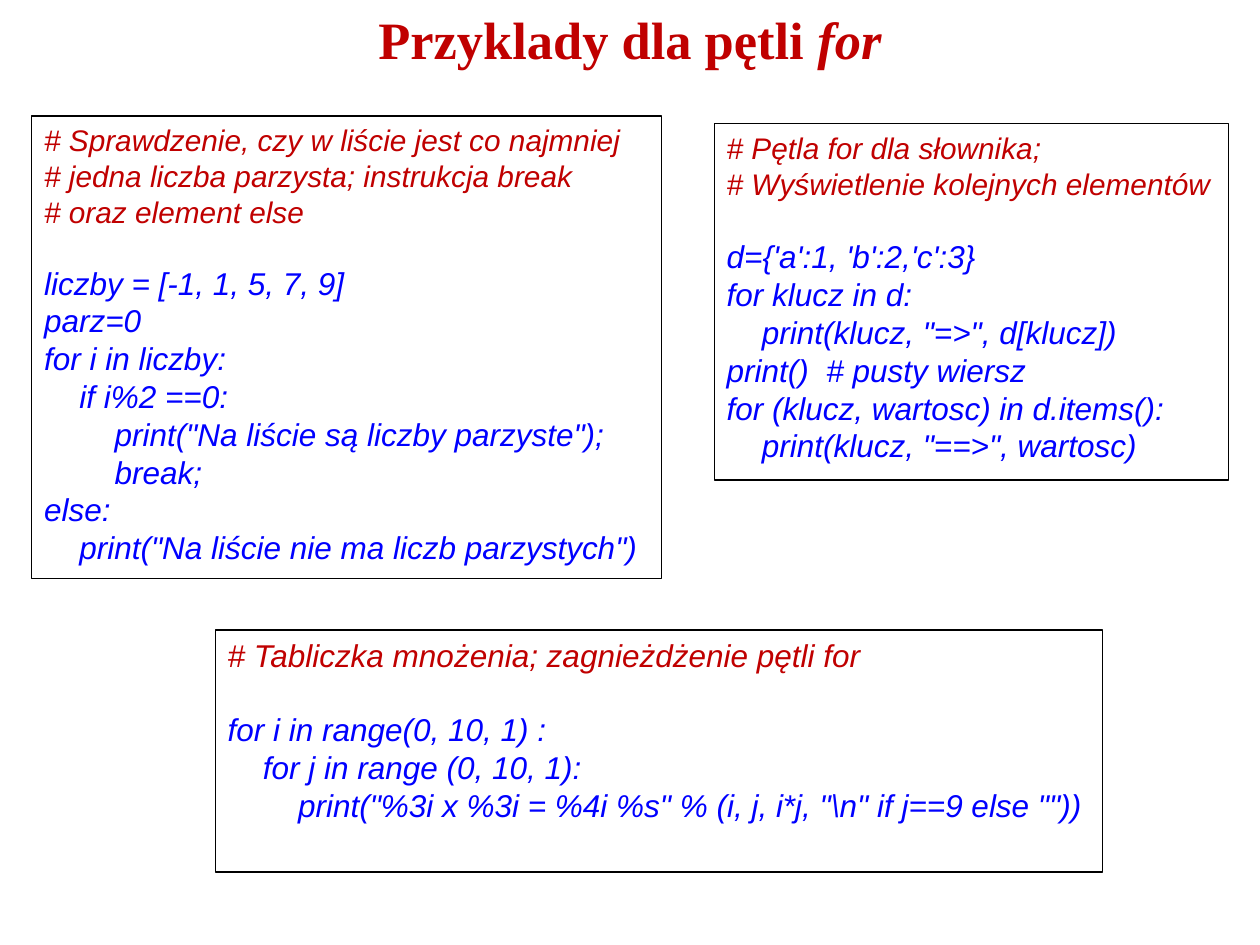
from pptx import Presentation
from pptx.dml.color import RGBColor
from pptx.enum.text import MSO_ANCHOR as Anchor, PP_ALIGN as Align
from pptx.util import Cm, Pt

COLORS = {"accent": "C00000", "code": "0000FF", "border": "000000"}
CODE_SIZE = 18
LINE_HEIGHT = 1.15
INDENT = Cm(0.71)

EXAMPLES = [
    {
        "box": (14.4, 2.49, 10.36, 7.19),
        "comment_size": 17,
        "gap_size": 18,
        "comments": ["# Pętla for dla słownika;", "# Wyświetlenie kolejnych elementów"],
        "code": [
            (0, "d={'a':1, 'b':2,'c':3}"),
            (0, "for klucz in d:"),
            (1, 'print(klucz, "=>", d[klucz])'),
            (0, "print()  # pusty wiersz"),
            (0, "for (klucz, wartosc) in d.items():"),
            (1, 'print(klucz, "==>", wartosc)'),
        ],
    },
    {
        "box": (4.34, 12.7, 17.88, 4.88),
        "comment_size": 18,
        "gap_size": 18,
        "comments": ["# Tabliczka mnożenia; zagnieżdżenie pętli for"],
        "code": [
            (0, "for i in range(0, 10, 1) :"),
            (1, "for j in range (0, 10, 1):"),
            (2, r'print("%3i x %3i = %4i %s" % (i, j, i*j, "\n" if j==9 else ""))'),
        ],
    },
    {
        "box": (0.64, 2.34, 12.7, 9.32),
        "comment_size": 17,
        "gap_size": 17,
        "comments": [
            "# Sprawdzenie, czy w liście jest co najmniej",
            "# jedna liczba parzysta; instrukcja break",
            "# oraz element else",
        ],
        "code": [
            (0, "liczby = [-1, 1, 5, 7, 9]"),
            (0, "parz=0"),
            (0, "for i in liczby:"),
            (1, "if i%2 ==0:"),
            (2, 'print("Na liście są liczby parzyste");'),
            (2, "break;"),
            (0, "else:"),
            (1, 'print("Na liście nie ma liczb parzystych")'),
        ],
    },
]


def style(run, font_name, size, color, bold=False, italic=False):
    """Give a run its typeface, size, colour and emphasis."""
    font = run.font
    font.name, font.size = font_name, Pt(size)
    font.bold, font.italic = bold, italic
    font.color.rgb = RGBColor.from_string(COLORS[color])


def add_title(slide, box):
    """Place the centred heading with its keyword in italics."""
    heading = slide.shapes.add_textbox(*map(Cm, box)).text_frame
    heading.word_wrap = True
    heading.vertical_anchor = Anchor.MIDDLE
    line = heading.paragraphs[0]
    line.alignment = Align.CENTER
    line.line_spacing = 0.9
    for wording, italic in (("Przyklady dla pętli ", False), ("for", True)):
        run = line.add_run()
        run.text = wording
        style(run, "Times New Roman", 30, "accent", bold=True, italic=italic)


def add_example(slide, box, comments, code, comment_size, gap_size):
    """Place a framed listing: comments, a gap, then indented code."""
    frame = slide.shapes.add_textbox(*map(Cm, box))
    frame.line.color.rgb = RGBColor.from_string(COLORS["border"])
    frame.line.width = Pt(0.75)
    listing = frame.text_frame
    listing.word_wrap = True
    lines = [(0, comment) for comment in comments] + code
    listing.text = "\n".join(wording for _, wording in lines)
    for row, (paragraph, (level, _)) in enumerate(zip(listing.paragraphs, lines)):
        is_code = row >= len(comments)
        size, color = (CODE_SIZE, "code") if is_code else (comment_size, "accent")
        style(paragraph.runs[0], "Arial", size, color, italic=True)
        if level:
            paragraph._p.get_or_add_pPr().set("marL", str(level * INDENT))
        if row == len(comments):
            paragraph.space_before = Pt(round(gap_size * LINE_HEIGHT, 1))


def main():
    """Build the slide and save it."""
    deck = Presentation()
    deck.slide_width, deck.slide_height = Cm(25.4), Cm(19.05)
    slide = deck.slides.add_slide(deck.slide_layouts[6])
    add_title(slide, (0, 0.2, 25.4, 1.32))
    for example in EXAMPLES:
        add_example(slide, **example)
    deck.save("out.pptx")


if __name__ == "__main__":
    main()
